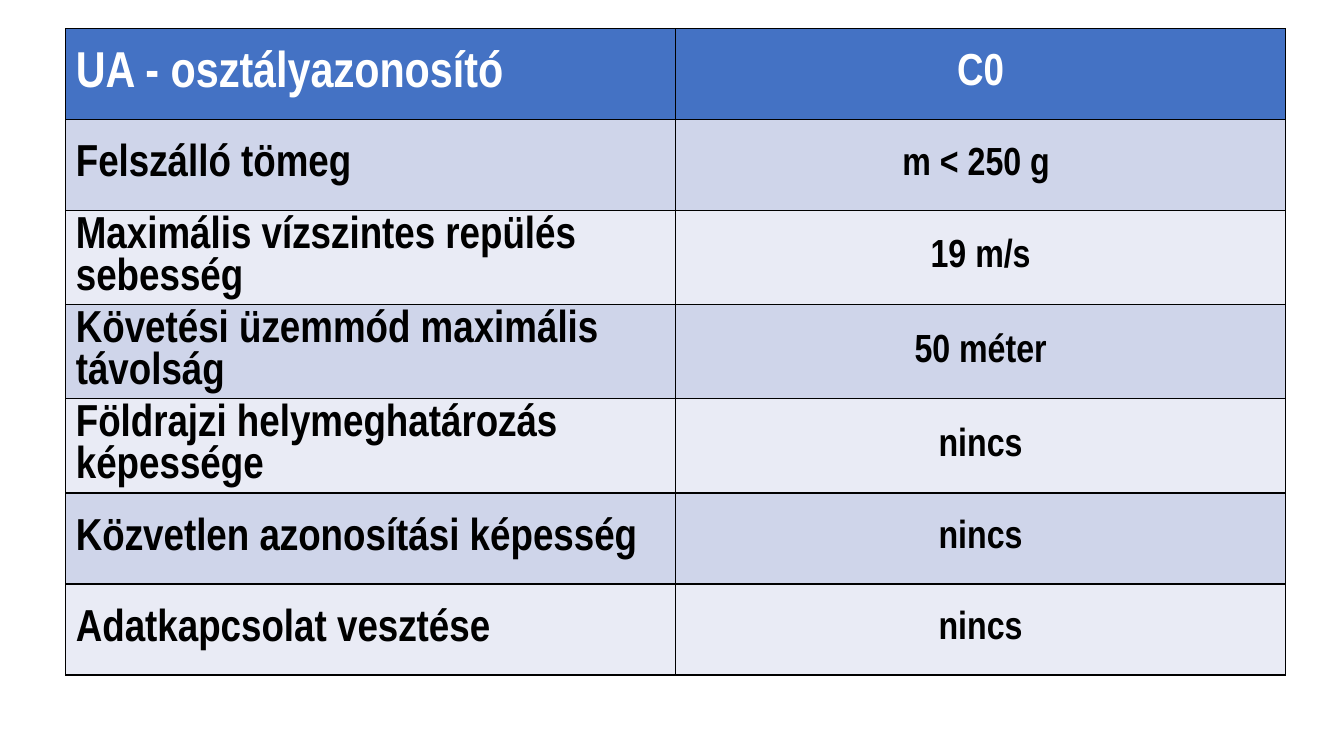
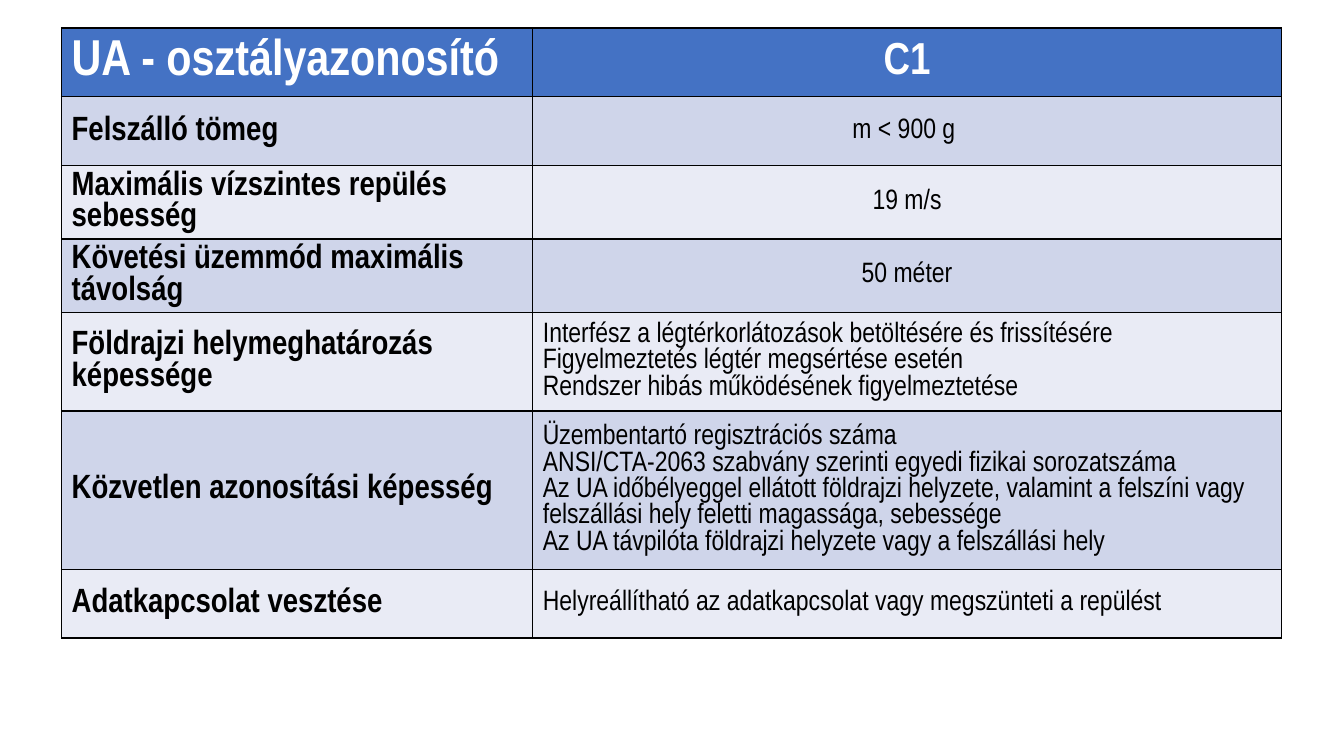
from lxml import etree
from pptx import Presentation
from pptx.dml.color import RGBColor
from pptx.enum import text
from pptx.oxml import ns
from pptx.util import Pt

COLORS = {"header": "4472C4", "odd": "CFD5EA", "even": "E9EBF5",
          "light": "FFFFFF", "dark": "000000"}
FONT = "Arial Narrow"
HEADER_LABEL = "UA - osztályazonosító"
LABELS = [
    "Felszálló tömeg",
    "Maximális vízszintes repülés sebesség",
    "Követési üzemmód maximális távolság",
    "Földrajzi helymeghatározás képessége",
    "Közvetlen azonosítási képesség",
    "Adatkapcsolat vesztése",
]
C0_VALUES = ["m < 250 g ", "19 m/s", "50 méter", "nincs", "nincs", "nincs"]
C1_VALUES = [
    "m < 900 g ",
    "19 m/s",
    "50 méter",
    ["Interfész a légtérkorlátozások betöltésére és frissítésére",
     "Figyelmeztetés légtér megsértése esetén",
     "Rendszer hibás működésének figyelmeztetése"],
    ["Üzembentartó regisztrációs száma",
     "ANSI/CTA-2063 szabvány szerinti egyedi fizikai sorozatszáma",
     "Az UA időbélyeggel ellátott földrajzi helyzete, valamint a felszíni vagy "
     "felszállási hely feletti magassága, sebessége",
     "Az UA távpilóta földrajzi helyzete vagy a felszállási hely"],
    ["Helyreállítható az adatkapcsolat vagy megszünteti a repülést"],
]


def rgb(name):
    """Return the named colour."""
    return RGBColor.from_string(COLORS[name])


def add_borders(cell, width=1):
    """Draw a solid dark line on every side of a cell."""
    tc_pr = cell._tc.get_or_add_tcPr()
    for i, side in enumerate(("lnL", "lnR", "lnT", "lnB")):
        ln = etree.Element(ns.qn(f"a:{side}"), w=str(Pt(width)))
        fill = etree.SubElement(ln, ns.qn("a:solidFill"))
        etree.SubElement(fill, ns.qn("a:srgbClr"), val=COLORS["dark"])
        tc_pr.insert(i, ln)


def fill_cell(cell, lines, size, fill, color, bold=True, centered=False):
    """Write lines into a cell and format it."""
    cell.fill.solid()
    cell.fill.fore_color.rgb = rgb(fill)
    add_borders(cell)
    cell.vertical_anchor = text.MSO_ANCHOR.MIDDLE
    tf = cell.text_frame
    tf.text = "\n".join(lines)
    for p in tf.paragraphs:
        p.alignment = text.PP_ALIGN.CENTER if centered else text.PP_ALIGN.LEFT
        for r in p.runs:
            r.font.name = FONT
            r.font.size = Pt(size)
            r.font.bold = bold
            r.font.color.rgb = rgb(color)


def add_class_slide(prs, name, values, left, top, widths, heights,
                    label_size, value_size, bold_values):
    """Add a slide with the requirements table of one drone class."""
    s = prs.slides.add_slide(prs.slide_layouts[6])
    table = s.shapes.add_table(
        len(heights), len(widths), Pt(left), Pt(top),
        Pt(sum(widths)), Pt(sum(heights))).table
    for column, width in zip(table.columns, widths):
        column.width = Pt(width)
    for row, height in zip(table.rows, heights):
        row.height = Pt(height)

    fill_cell(table.cell(0, 0), [HEADER_LABEL], 36, "header", "light")
    fill_cell(table.cell(0, 1), [name], 32, "header", "light", centered=True)
    for i, (label, value) in enumerate(zip(LABELS, values), start=1):
        band = "odd" if i % 2 else "even"
        centered = isinstance(value, str)
        fill_cell(table.cell(i, 0), [label], label_size, band, "dark")
        fill_cell(table.cell(i, 1), [value] if centered else value, value_size,
                  band, "dark", bold_values, centered)


def main():
    """Build and save the presentation."""
    prs = Presentation()
    prs.slide_width, prs.slide_height = Pt(960), Pt(540)
    add_class_slide(prs, "C0", C0_VALUES, 47, 20.5, [435.6] * 2, [65] * 7,
                    label_size=32, value_size=28, bold_values=True)
    add_class_slide(prs, "C1", C1_VALUES, 44, 20, [336.6, 534.6],
                    [49.2] * 4 + [70.5, 113, 49.2],
                    label_size=24, value_size=20, bold_values=False)
    prs.save("out.pptx")


if __name__ == "__main__":
    main()
